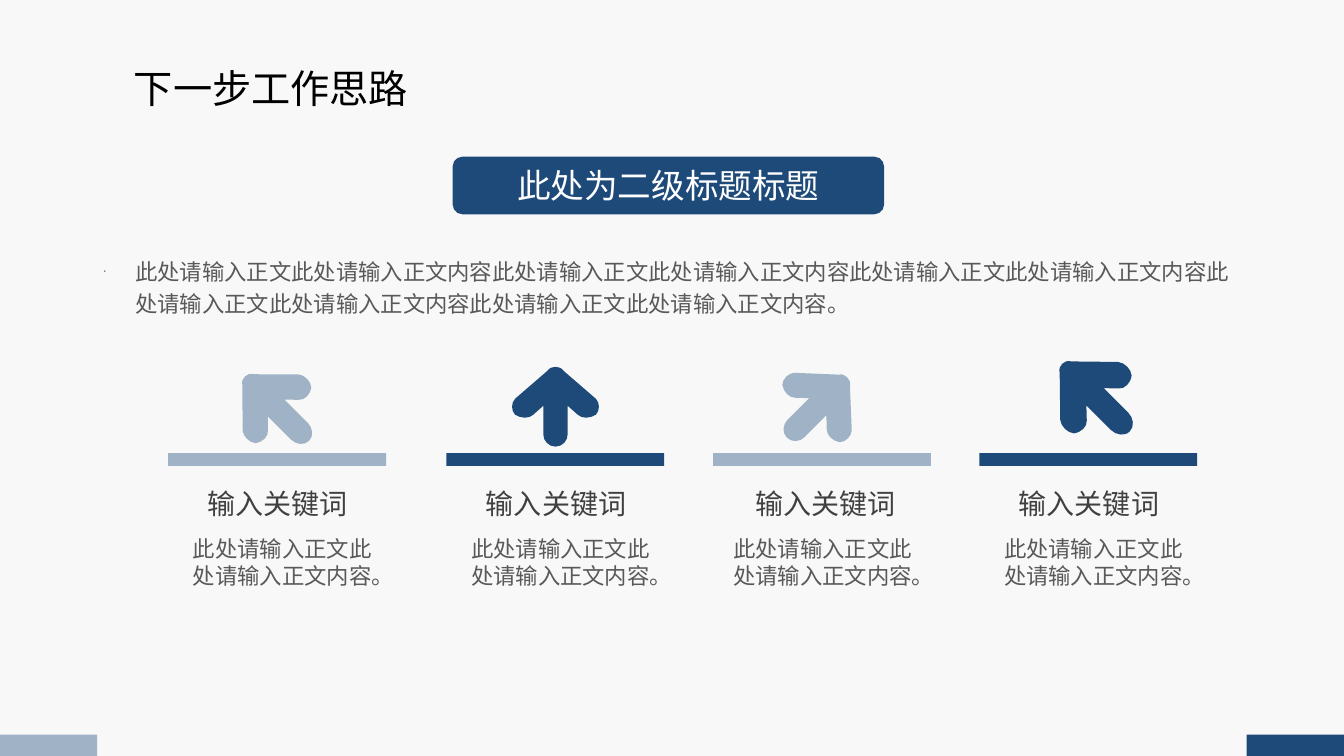
"""Builds the next-steps slide with four arrow columns."""
import pptx
import pptx.util
import pptx.dml.color
import pptx.enum.shapes
import pptx.enum.text
import pptx.oxml.ns
import lxml.etree

Cm, Pt = pptx.util.Cm, pptx.util.Pt
SHAPE = pptx.enum.shapes.MSO_SHAPE
ALIGN = pptx.enum.text.PP_ALIGN
ANCHOR = pptx.enum.text.MSO_ANCHOR
qn = pptx.oxml.ns.qn

FONT = "Noto Sans CJK SC"
COLORS = {"back": "F8F8F8", "navy": "1E4A7A", "mist": "A0B2C5", "body": "595959",
          "keyword": "404040", "title": "000000", "white": "FFFFFF"}
SLIDE_W, SLIDE_H = 33.87, 19.05

TITLE = "下一步工作思路"
BANNER = "此处为二级标题标题"
INTRO = ("此处请输入正文此处请输入正文内容此处请输入正文此处请输入正文内容"
         "此处请输入正文此处请输入正文内容此处请输入正文此处请输入正文内容"
         "此处请输入正文此处请输入正文内容。")
KEYWORD = "输入关键词"
DETAIL = "此处请输入正文此处请输入正文内容。"

COLUMNS = [
    {"left": 4.24, "color": "mist", "center": (6.98, 10.3), "size": (2.19, 2.29),
     "turn": -45, "keyword": ALIGN.CENTER, "detail": ALIGN.CENTER},
    {"left": 11.25, "color": "navy", "center": (14.0, 10.25), "size": (2.24, 2.01),
     "turn": 0, "keyword": ALIGN.CENTER, "detail": ALIGN.CENTER},
    {"left": 17.97, "color": "mist", "center": (20.59, 10.27), "size": (2.25, 2.15),
     "turn": 45, "keyword": ALIGN.RIGHT, "detail": ALIGN.LEFT},
    {"left": 24.68, "color": "navy", "center": (27.62, 10.02), "size": (2.27, 2.41),
     "turn": -45, "keyword": ALIGN.CENTER, "detail": ALIGN.CENTER},
]
ARROW_TIP = (0, 0)
ARROW_HALF = [
    [(3, 0), (6, 1), (8.5, 3.5)],
    [(39.5, 32.5)],
    [(44.5, 36.5), (44.5, 43.5), (39.5, 48.5)],
    [(34.5, 52.5), (26.5, 52.5), (21.5, 48.5)],
    [(12, 39)],
    [(12, 68.5)],
    [(12, 74.5), (7, 79.5), (0, 79.5)],
]


def rgb(name):
    return pptx.dml.color.RGBColor.from_string(COLORS[name])


def paint(sp, color):
    sp.shadow.inherit = False
    sp.fill.solid()
    sp.fill.fore_color.rgb = rgb(color)
    sp.line.fill.background()


def write(sp, text, size, color, align):
    tf = sp.text_frame
    tf.text = text
    tf.word_wrap = True
    p = tf.paragraphs[0]
    p.alignment = align
    r = p.runs[0]
    r.font.size = Pt(size)
    r.font.name = FONT
    r.font.color.rgb = rgb(color)
    lxml.etree.SubElement(r.font._element, qn("a:ea")).set("typeface", FONT)
    return p


def add_box(s, box, text, size, color, align):
    sp = s.shapes.add_textbox(*map(Cm, box))
    return write(sp, text, size, color, align)


def add_block(s, kind, box, color):
    sp = s.shapes.add_shape(kind, *map(Cm, box))
    paint(sp, color)
    return sp


def add_bullet(p, indent, percent):
    pPr = p._p.get_or_add_pPr()
    pPr.set("marL", str(Cm(indent)))
    pPr.set("indent", str(-Cm(indent)))
    for tag, key, value in (("a:buSzPct", "val", str(percent * 1000)),
                            ("a:buFont", "typeface", "Arial"),
                            ("a:buChar", "char", "•")):
        lxml.etree.SubElement(pPr, qn(tag)).set(key, value)


def bend_lines(sp, counts):
    """Turn each run of three line points into one curve."""
    lines = list(sp._element.iter(qn("a:lnTo")))
    for count in counts:
        first, *rest = lines[:count]
        lines = lines[count:]
        if rest:
            curve = lxml.etree.Element(qn("a:cubicBezTo"))
            first.addprevious(curve)
            for line in (first, *rest):
                curve.append(line[0])
                line.getparent().remove(line)


def add_arrow(s, center, size, turn, color):
    right = [ARROW_TIP] + [point for segment in ARROW_HALF for point in segment]
    left = [(-x, y) for x, y in reversed(right[:-1])]
    counts = [len(segment) for segment in ARROW_HALF]
    fb = s.shapes.build_freeform(*ARROW_TIP, scale=Cm(0.03))
    fb.add_line_segments(right[1:] + left, close=True)
    sp = fb.convert_to_shape()
    bend_lines(sp, counts + counts[::-1])
    sp.width, sp.height = map(Cm, size)
    sp.left, sp.top = (Cm(c - d / 2) for c, d in zip(center, size))
    sp.rotation = turn
    paint(sp, color)


def main():
    prs = pptx.Presentation()
    prs.slide_width, prs.slide_height = Cm(SLIDE_W), Cm(SLIDE_H)
    s = prs.slides.add_slide(prs.slide_layouts[5])
    s.background.fill.solid()
    s.background.fill.fore_color.rgb = rgb("back")

    title = s.shapes.title
    title.left, title.top, title.width, title.height = map(Cm, (3.12, 1.5, 8.28, 1.45))
    title.text_frame.vertical_anchor = ANCHOR.TOP
    write(title, TITLE, 28, "title", ALIGN.JUSTIFY)

    p = add_box(s, (2.37, 6.25, 29.13, 1.9), INTRO, 16, "body", ALIGN.LEFT)
    p.line_spacing = 1.2
    add_bullet(p, 0.79, 25)

    for col in COLUMNS:
        left = col["left"]
        add_arrow(s, col["center"], col["size"], col["turn"], col["color"])
        add_block(s, SHAPE.RECTANGLE, (left, 11.42, 5.49, 0.32), col["color"])
        add_box(s, (left + 0.67, 12.14, 4.19, 1.12), KEYWORD, 20, "keyword", col["keyword"])
        add_box(s, (left + 0.26, 13.36, 5.23, 1.63), DETAIL, 16, "body", col["detail"])

    banner = add_block(s, SHAPE.ROUNDED_RECTANGLE, (11.41, 3.95, 10.87, 1.45), "navy")
    write(banner, BANNER, 24, "white", ALIGN.CENTER)

    corner_w, corner_h = 2.45, 0.54
    for left, color in ((0, "mist"), (SLIDE_W - corner_w, "navy")):
        add_block(s, SHAPE.RECTANGLE, (left, SLIDE_H - corner_h, corner_w, corner_h), color)

    prs.save("out.pptx")


if __name__ == "__main__":
    main()
